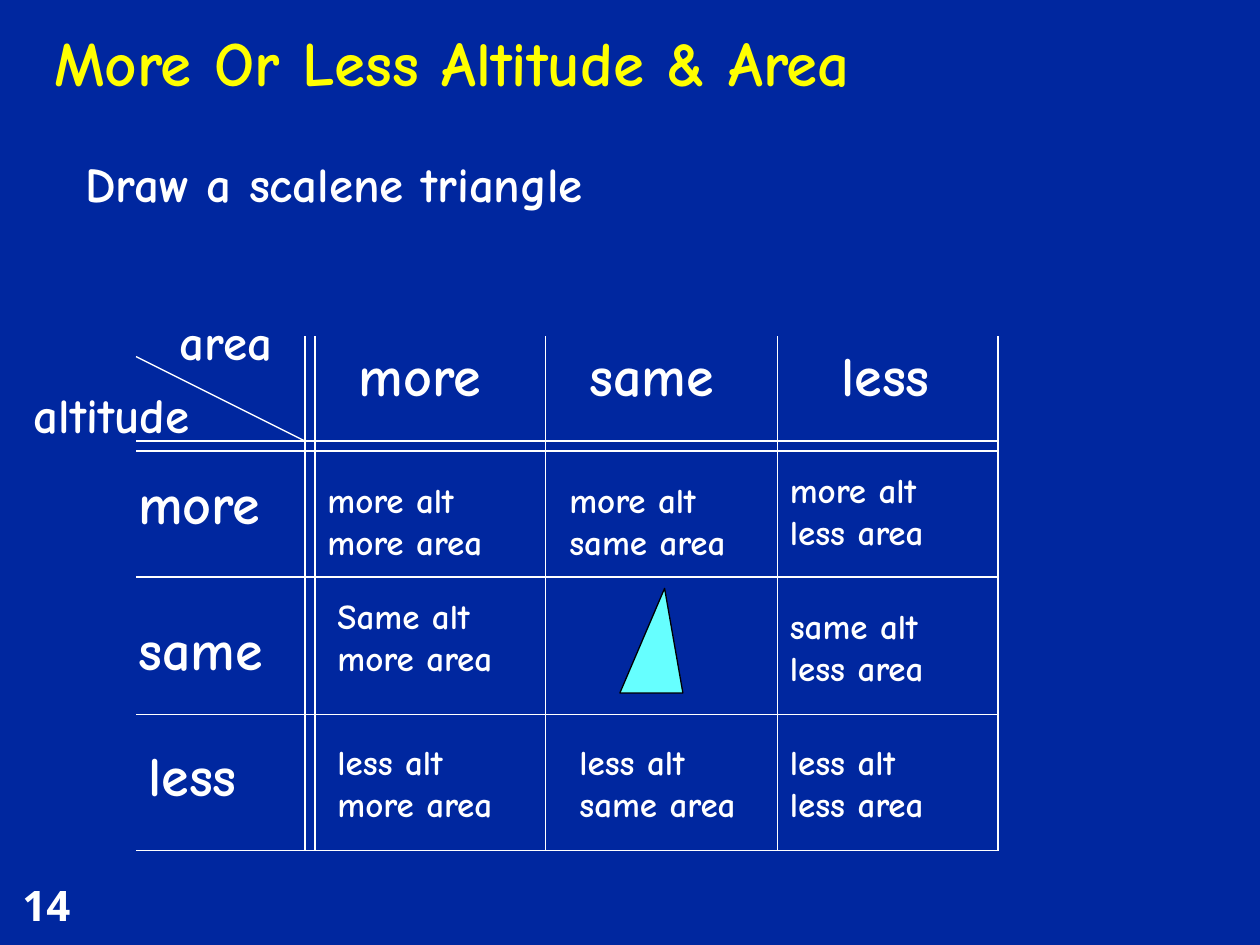
from lxml import etree
from pptx import Presentation
from pptx.dml.color import RGBColor
from pptx.enum.shapes import MSO_CONNECTOR, MSO_SHAPE
from pptx.enum.text import MSO_ANCHOR, MSO_AUTO_SIZE, PP_ALIGN
from pptx.oxml.ns import qn
from pptx.util import Inches, Pt

COLORS = {"bg": "00279F", "title": "FFFF00", "text": "FFFFFF",
          "grid": "FFFFFF", "triangle": "66FFFF", "outline": "000000"}
FONT = "Comic Neue"
NUMBER_FONT = "Open Sans"


def rgb(name):
    return RGBColor.from_string(COLORS[name])


def write(tf, text, size=20, font=FONT, color="text"):
    """Fill a text frame with one bold paragraph; a newline is a line break."""
    tf.word_wrap = True
    p = tf.paragraphs[0]
    p.alignment = PP_ALIGN.LEFT
    for i, line in enumerate(text.split("\n")):
        if i:
            p.add_line_break()
        r = p.add_run()
        r.text = line
        r.font.size = Pt(size)
        r.font.name = font
        r.font.bold = True
        r.font.color.rgb = rgb(color)


def add_text(s, text, x, y, w, h, **fmt):
    sp = s.shapes.add_textbox(Inches(x), Inches(y), Inches(w), Inches(h))
    write(sp.text_frame, text, **fmt)


def add_line(s, x1, y1, x2, y2):
    line = s.shapes.add_connector(MSO_CONNECTOR.STRAIGHT, Inches(x1), Inches(y1),
                                  Inches(x2), Inches(y2))
    line.line.color.rgb = rgb("grid")
    line.line.width = Pt(0.75)
    etree.SubElement(line._element.spPr, qn("a:effectLst"))


def add_title(s, text, x, y, w, h):
    sp = s.shapes.title
    sp.left, sp.top, sp.width, sp.height = (Inches(v) for v in (x, y, w, h))
    tf = sp.text_frame
    tf.auto_size = MSO_AUTO_SIZE.NONE
    tf.vertical_anchor = MSO_ANCHOR.BOTTOM
    write(tf, text, size=36, color="title")


def add_grid_lines(s, x, y, w, h):
    """Rule the grid, with a double line after the header row and column."""
    for dy in (0.83, 0.91, 1.91, 3, h):
        add_line(s, x, y + dy, x + w, y + dy)
    for dx in (1.34, 1.42, 3.25, 5.09, w):
        add_line(s, x + dx, y, x + dx, y + h)
    add_line(s, x + 1.34, y + 0.83, x, y + 0.16)


def add_headers(s, x, y):
    for text, dx in (("more", 1.67), ("same", 3.5), ("less", 5.5)):
        add_text(s, text, x + dx, y - 0.02, 1.42, 0.63, size=32)
    for text, dx, dy in (("more", -0.08, 1), ("same", -0.08, 2.16), ("less", 0, 3.16)):
        add_text(s, text, x + dx, y + dy, 1.42, 0.63, size=32)
    add_text(s, "area", x + 0.25, y - 0.25, 1, 0.57, size=28)
    add_text(s, "altitude", x - 0.91, y + 0.33, 1.67, 0.57, size=28)


def add_cells(s, x, y):
    cells = [
        ("more alt\nmore area", 1.42, 1.08),
        ("more alt\nsame area", 3.34, 1.08),
        ("more alt\nless area", 5.09, 1),
        ("Same alt\nmore area", 1.5, 2),
        ("same alt\nless area", 5.09, 2.08),
        ("less alt\nmore area", 1.5, 3.16),
        ("less alt\nsame area", 3.42, 3.16),
        ("less alt\nless area", 5.09, 3.16),
    ]
    for text, dx, dy in cells:
        add_text(s, text, x + dx, y + dy, 1.75, 0.77)


def add_triangle(s, x, y, w, h):
    sp = s.shapes.add_shape(MSO_SHAPE.ISOSCELES_TRIANGLE, Inches(x), Inches(y),
                            Inches(w), Inches(h))
    sp.adjustments[0] = 0.71
    sp.shadow.inherit = False
    sp.fill.solid()
    sp.fill.fore_color.rgb = rgb("triangle")
    sp.line.color.rgb = rgb("outline")
    sp.line.width = Pt(0.75)


def add_altitude_area_grid(s, x, y, w, h):
    add_headers(s, x, y)
    add_grid_lines(s, x, y, w, h)
    add_triangle(s, x + 3.84, y + 2, 0.5, 0.83)
    add_cells(s, x, y)


def main():
    prs = Presentation()
    prs.slide_width, prs.slide_height = Inches(10), Inches(7.5)
    s = prs.slides.add_slide(prs.slide_layouts[5])
    s.background.fill.solid()
    s.background.fill.fore_color.rgb = rgb("bg")

    add_text(s, "14", 0.08, 6.93, 0.75, 0.5, size=24, font=NUMBER_FONT)
    add_title(s, "More Or Less Altitude & Area", 0.33, 0.17, 8.5, 0.67)
    add_text(s, "Draw a scalene triangle", 0.58, 1.17, 4.5, 0.57, size=28)
    add_altitude_area_grid(s, 1.08, 2.67, 6.84, 4.08)
    prs.save("out.pptx")


if __name__ == "__main__":
    main()
